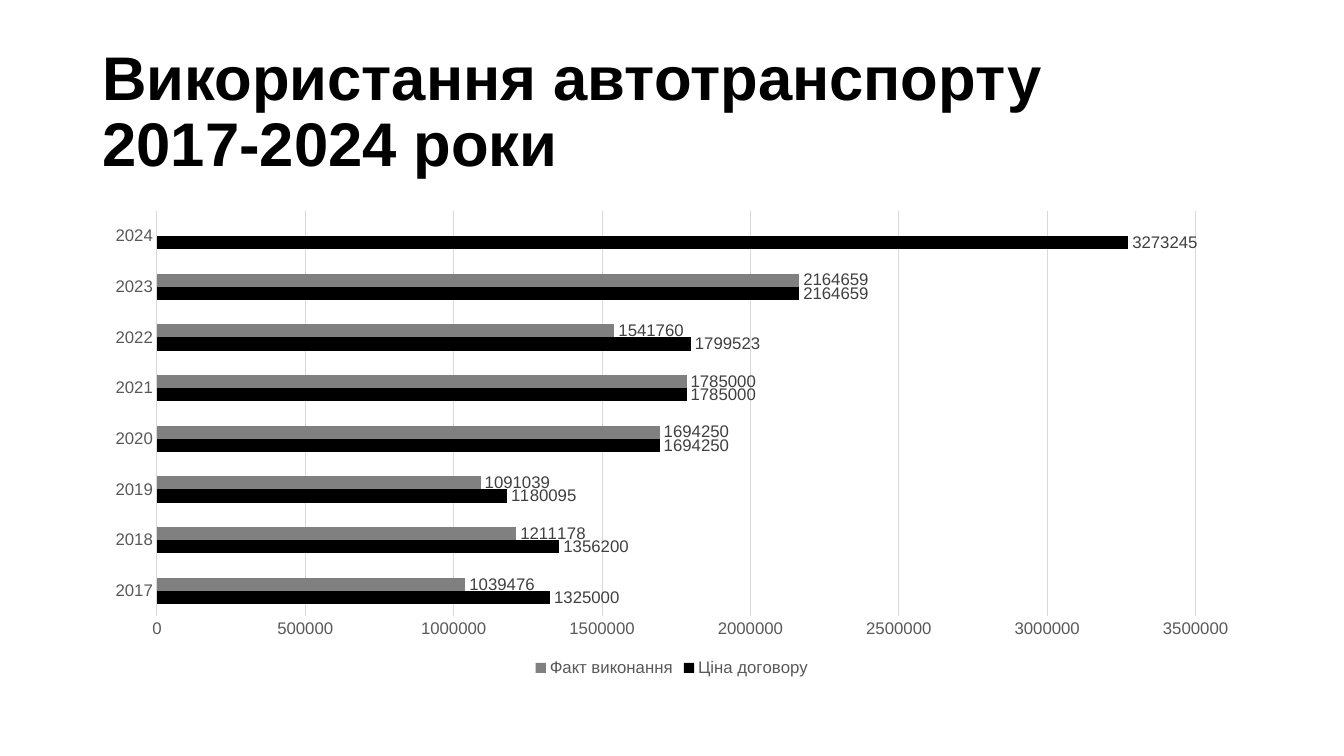
from dataclasses import dataclass
from typing import Optional

from pptx import Presentation
from pptx.chart.data import CategoryChartData
from pptx.dml.color import RGBColor
from pptx.enum.chart import XL_CHART_TYPE, XL_LABEL_POSITION, XL_LEGEND_POSITION, XL_TICK_MARK
from pptx.enum.text import MSO_ANCHOR
from pptx.util import Pt

BAR_CLUSTERED = XL_CHART_TYPE.BAR_CLUSTERED
OUTSIDE_END = XL_LABEL_POSITION.OUTSIDE_END
LEGEND_BOTTOM = XL_LEGEND_POSITION.BOTTOM
NO_TICK = XL_TICK_MARK.NONE
MIDDLE = MSO_ANCHOR.MIDDLE

FONT = "Arial"
BLACK = RGBColor(0x00, 0x00, 0x00)
GRAY = RGBColor(0x80, 0x80, 0x80)
LABEL_GRAY = RGBColor(0x40, 0x40, 0x40)
AXIS_GRAY = RGBColor(0x59, 0x59, 0x59)
GRID_GRAY = RGBColor(0xD9, 0xD9, 0xD9)

LEFT, WIDTH = 66, 828
YEARS = [str(year) for year in range(2017, 2025)]


@dataclass(frozen=True)
class Measure:
    name: str
    color: RGBColor
    amounts: tuple[Optional[int], ...]


MEASURES = (
    Measure("Ціна договору", BLACK,
            (1325000, 1356200, 1180095, 1694250, 1785000, 1799523, 2164659, 3273245)),
    Measure("Факт виконання", GRAY,
            (1039476, 1211178, 1091039, 1694250, 1785000, 1541760, 2164659, None)),
)


def set_font(font, *, size: float, color: RGBColor, bold: bool = False) -> None:
    font.name = FONT
    font.size = Pt(size)
    font.bold = bold
    font.color.rgb = color


def add_text(slide, text: str, *, left: float, top: float, width: float, height: float,
             size: float, color: RGBColor, bold: bool, line_spacing: float) -> None:
    """Add a vertically centred text box; a vertical tab in text breaks the line."""
    frame = slide.shapes.add_textbox(Pt(left), Pt(top), Pt(width), Pt(height)).text_frame
    frame.word_wrap = True
    frame.vertical_anchor = MIDDLE
    paragraph = frame.paragraphs[0]
    paragraph.text = text
    paragraph.line_spacing = line_spacing
    set_font(paragraph.font, size=size, color=color, bold=bold)


def set_line(line, color: RGBColor) -> None:
    line.color.rgb = color
    line.width = Pt(0.75)


def style_axis(axis) -> None:
    axis.major_tick_mark = NO_TICK
    axis.minor_tick_mark = NO_TICK
    set_font(axis.tick_labels.font, size=12, color=AXIS_GRAY)


def add_usage_chart(slide, *, left: float, top: float, width: float, height: float) -> None:
    chart_data = CategoryChartData(number_format="General")
    chart_data.categories = YEARS
    for measure in MEASURES:
        chart_data.add_series(measure.name, measure.amounts)
    chart = slide.shapes.add_chart(
        BAR_CLUSTERED, Pt(left), Pt(top), Pt(width), Pt(height), chart_data).chart
    set_font(chart.font, size=10, color=BLACK)
    chart.has_title = False

    chart.has_legend = True
    chart.legend.position = LEGEND_BOTTOM
    chart.legend.include_in_layout = False
    set_font(chart.legend.font, size=12, color=AXIS_GRAY)

    years, amounts = chart.category_axis, chart.value_axis
    style_axis(years)
    set_line(years.format.line, GRID_GRAY)
    style_axis(amounts)
    amounts.format.line.fill.background()
    amounts.has_major_gridlines = True
    set_line(amounts.major_gridlines.format.line, GRID_GRAY)

    plot = chart.plots[0]
    plot.gap_width = 182
    plot.vary_by_categories = False
    for bars, measure in zip(plot.series, MEASURES):
        bars.format.fill.solid()
        bars.format.fill.fore_color.rgb = measure.color
        bars.invert_if_negative = False
        labels = bars.data_labels
        labels.show_value = True
        labels.position = OUTSIDE_END
        set_font(labels.font, size=12, color=LABEL_GRAY)


def main() -> None:
    presentation = Presentation()
    presentation.slide_width = Pt(960)
    presentation.slide_height = Pt(540)
    slide = presentation.slides.add_slide(presentation.slide_layouts[6])
    add_text(slide, "Використання автотранспорту\v2017-2024 роки",
             left=LEFT, top=28.75, width=WIDTH, height=104.4,
             size=44, color=BLACK, bold=True, line_spacing=0.9)
    add_usage_chart(slide, left=LEFT, top=143.75, width=WIDTH, height=342.6)
    presentation.save("out.pptx")


if __name__ == "__main__":
    main()
